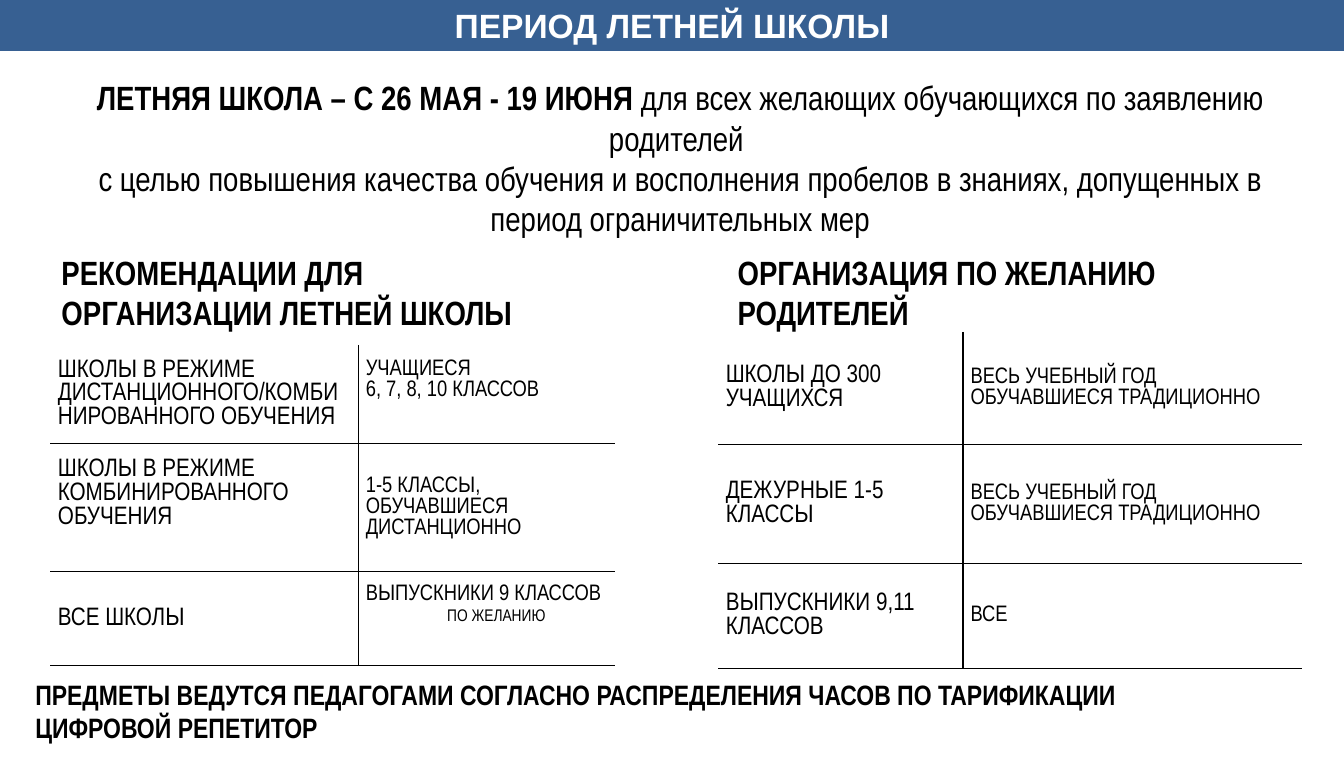
from dataclasses import dataclass

from pptx import Presentation
from pptx.dml.color import RGBColor
from pptx.enum.text import MSO_ANCHOR, PP_ALIGN
from pptx.oxml import parse_xml
from pptx.oxml.ns import nsdecls, qn
from pptx.util import Cm, Pt


@dataclass(frozen=True)
class Theme:
    banner: RGBColor = RGBColor(0x37, 0x60, 0x92)
    banner_text: RGBColor = RGBColor(0xFF, 0xFF, 0xFF)
    ink: RGBColor = RGBColor(0, 0, 0)
    title_font: str = "Arial"
    body_font: str = "Arial Narrow"
    heading_size: int = 24
    footer_size: int = 20
    group_size: int = 18
    detail_size: int = 16
    note_size: int = 12
    note_gap: int = 3
    plain_table_style: str = "{2D5ABB26-0587-4C30-8999-92F81FD0307C}"


THEME = Theme()


@dataclass(frozen=True)
class Box:
    """A region of the slide in centimetres."""
    left: float
    top: float
    width: float
    height: float

    def lengths(self):
        return [Cm(value) for value in (self.left, self.top, self.width, self.height)]


@dataclass(frozen=True)
class Entry:
    """Text of one table cell, with an optional small note below it."""
    text: str
    note: str = ""
    raised: bool = False


def format_runs(paragraph, size, bold=False, color=THEME.ink, font=THEME.body_font):
    for run in paragraph.runs:
        run.font.name = font
        run.font.size = Pt(size)
        run.font.bold = bold
        run.font.color.rgb = color


def add_banner(slide, box, text):
    title = slide.shapes.title
    title.left, title.top, title.width, title.height = box.lengths()
    title.fill.solid()
    title.fill.fore_color.rgb = THEME.banner
    text_frame = title.text_frame
    text_frame.text = text
    text_frame.vertical_anchor = MSO_ANCHOR.MIDDLE
    text_frame.margin_top = text_frame.margin_bottom = 0
    paragraph = text_frame.paragraphs[0]
    paragraph.alignment = PP_ALIGN.CENTER
    format_runs(paragraph, THEME.heading_size, True, THEME.banner_text, THEME.title_font)


def add_text(slide, box, text, size, bold=True, alignment=PP_ALIGN.LEFT):
    text_frame = slide.shapes.add_textbox(*box.lengths()).text_frame
    text_frame.word_wrap = True
    text_frame.text = text
    for paragraph in text_frame.paragraphs:
        paragraph.alignment = alignment
        format_runs(paragraph, size, bold)
    return text_frame


def add_intro(slide, box, period, audience, purpose):
    text_frame = add_text(slide, box, f"{period}\n{purpose}", THEME.heading_size,
                          False, PP_ALIGN.CENTER)
    first = text_frame.paragraphs[0]
    first.add_run().text = audience
    format_runs(first, THEME.heading_size)
    first.runs[0].font.bold = True


def add_border(cell, edge, width=1):
    properties = cell._tc.get_or_add_tcPr()
    line = parse_xml(f'<a:{edge} {nsdecls("a")} w="{Pt(width)}"><a:solidFill>'
                     f'<a:srgbClr val="{THEME.ink}"/></a:solidFill></a:{edge}>')
    lines = [child for child in properties if child.tag.startswith(qn("a:ln"))]
    properties.insert(len(lines), line)


def fill_cell(cell, entry, size):
    cell.fill.background()
    cell.vertical_anchor = MSO_ANCHOR.MIDDLE
    cell.margin_left = cell.margin_right = Cm(0.19)
    cell.margin_top = Cm(0.1)
    cell.margin_bottom = Cm(0.8 if entry.raised else 0.1)
    cell.text_frame.text = entry.text
    for paragraph in cell.text_frame.paragraphs:
        format_runs(paragraph, size)
    if entry.note:
        note = cell.text_frame.add_paragraph()
        note.text = entry.note
        note.space_before = Pt(THEME.note_gap)
        note._p.get_or_add_pPr().set("marL", str(Cm(2.05)))
        format_runs(note, THEME.note_size)


def add_group_table(slide, box, column_widths, row_heights, rows):
    frame = slide.shapes.add_table(len(rows), len(column_widths), *box.lengths())
    table = frame.table
    table.first_row = table.horz_banding = False
    table._tbl.tblPr.find(qn("a:tableStyleId")).text = THEME.plain_table_style
    for column, width in zip(table.columns, column_widths):
        column.width = Cm(width)
    for row, height, entries in zip(table.rows, row_heights, rows):
        row.height = Cm(height)
        group, details = row.cells
        fill_cell(group, entries[0], THEME.group_size)
        fill_cell(details, entries[1], THEME.detail_size)
        # Vertical divider and the rule under the row
        add_border(group, "lnR")
        add_border(details, "lnL")
        for cell in (group, details):
            add_border(cell, "lnB")


def build_summer_school_slide(presentation):
    slide = presentation.slides.add_slide(presentation.slide_layouts[5])

    # Title banner and introduction
    add_banner(slide, Box(0, 0, 33.87, 1.28), "ПЕРИОД ЛЕТНЕЙ ШКОЛЫ")
    add_intro(slide, Box(1.37, 1.82, 31.54, 4.2),
              "ЛЕТНЯЯ ШКОЛА – С 26 МАЯ - 19 ИЮНЯ ",
              "для всех желающих обучающихся по заявлению родителей ",
              "с целью повышения качества обучения и восполнения пробелов в знаниях, "
              "допущенных в период ограничительных мер")

    # Recommendations
    add_text(slide, Box(1.3, 6.22, 12.73, 2.3),
             "РЕКОМЕНДАЦИИ ДЛЯ ОРГАНИЗАЦИИ ЛЕТНЕЙ ШКОЛЫ", THEME.heading_size)
    add_group_table(slide, Box(1.27, 8.69, 14.22, 8.07), (7.76, 6.46), (2.48, 3.23, 2.36), [
        (Entry("ШКОЛЫ В РЕЖИМЕ ДИСТАНЦИОННОГО/КОМБИНИРОВАННОГО ОБУЧЕНИЯ"),
         Entry("УЧАЩИЕСЯ\n6, 7, 8, 10 КЛАССОВ", raised=True)),
        (Entry("ШКОЛЫ В РЕЖИМЕ КОМБИНИРОВАННОГО ОБУЧЕНИЯ", raised=True),
         Entry("1-5 КЛАССЫ, ОБУЧАВШИЕСЯ ДИСТАНЦИОННО")),
        (Entry("ВСЕ ШКОЛЫ"),
         Entry("ВЫПУСКНИКИ 9 КЛАССОВ", note="ПО ЖЕЛАНИЮ", raised=True)),
    ])

    # Organisation at the parents' request
    all_year = Entry("ВЕСЬ УЧЕБНЫЙ ГОД ОБУЧАВШИЕСЯ ТРАДИЦИОННО")
    add_text(slide, Box(18.34, 6.22, 13.59, 2.3),
             "ОРГАНИЗАЦИЯ ПО ЖЕЛАНИЮ РОДИТЕЛЕЙ", THEME.heading_size)
    add_group_table(slide, Box(18.1, 8.36, 14.7, 8.48), (6.17, 8.53), (2.84, 3, 2.64), [
        (Entry("ШКОЛЫ ДО 300 УЧАЩИХСЯ"), all_year),
        (Entry("ДЕЖУРНЫЕ 1-5 КЛАССЫ"), all_year),
        (Entry("ВЫПУСКНИКИ 9,11 КЛАССОВ"), Entry("ВСЕ")),
    ])

    # Closing statement
    add_text(slide, Box(0.64, 16.94, 32.59, 1.96),
             "ПРЕДМЕТЫ ВЕДУТСЯ ПЕДАГОГАМИ СОГЛАСНО РАСПРЕДЕЛЕНИЯ ЧАСОВ ПО ТАРИФИКАЦИИ\n"
             "ЦИФРОВОЙ РЕПЕТИТОР", THEME.footer_size)


def main():
    presentation = Presentation()
    presentation.slide_width = Cm(33.87)
    presentation.slide_height = Cm(19.5)
    build_summer_school_slide(presentation)
    presentation.save("out.pptx")


if __name__ == "__main__":
    main()
